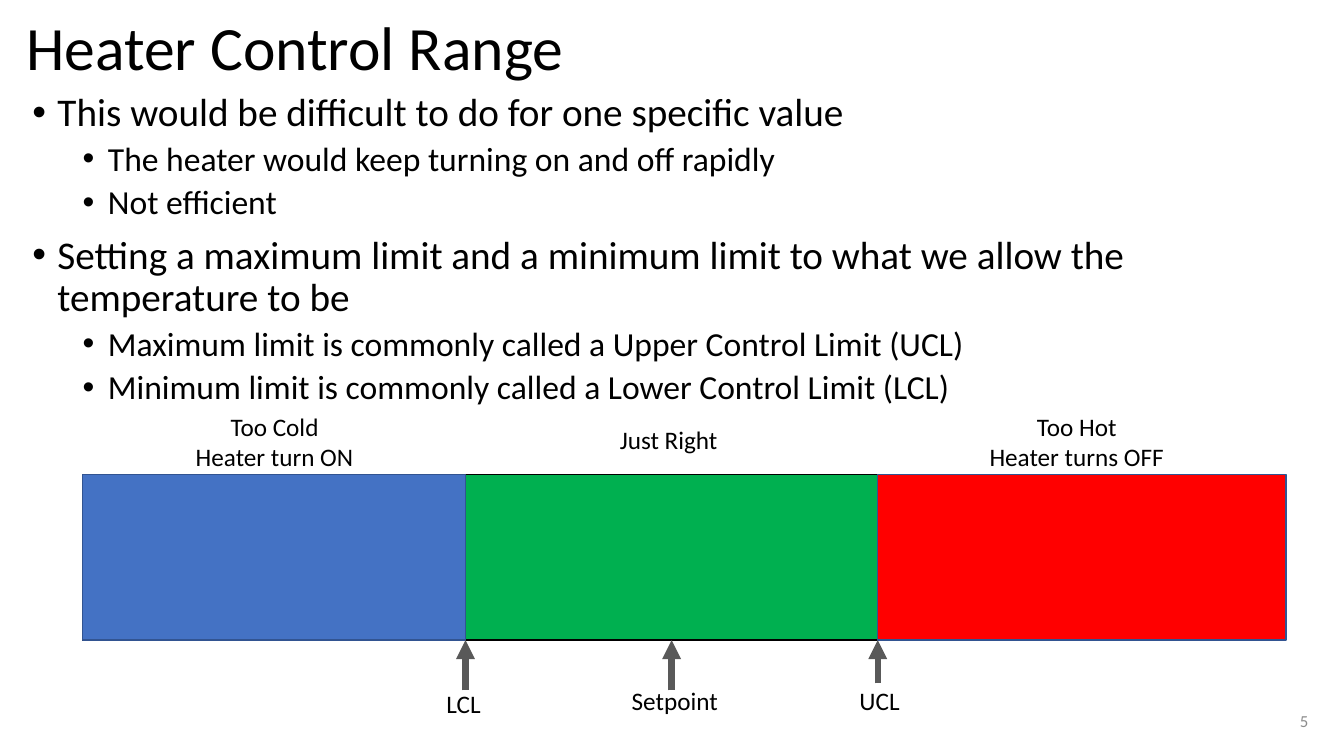
from typing import NamedTuple

from lxml import etree
from pptx import Presentation
from pptx import util as u
from pptx.dml.color import RGBColor
from pptx.enum import shapes, text
from pptx.oxml import ns

HUES = {"ink": "000000", "grey": "8C8C8C", "arrow": "595959", "edge": "325491",
        "cold": "4472C4", "right": "00B050", "hot": "FF0000"}
FONT = "Calibri"
TOP, TALL = 11.96, 4.17
LCL, UCL = 11.73, 22.12
MID = (LCL + UCL) / 2


class Zone(NamedTuple):
    left: float
    wide: float
    fill: str
    edge: str


class Label(NamedTuple):
    words: str
    left: float
    top: float
    wide: float
    high: float = 1.02
    align: text.PP_ALIGN = text.PP_ALIGN.LEFT
    size: int = 18
    hue: str = "ink"
    anchor: text.MSO_ANCHOR = text.MSO_ANCHOR.TOP


class Mark(NamedTuple):
    x: float
    foot: float


class Point(NamedTuple):
    words: str
    level: int = 0


ZONES = [Zone(2.08, 30.3, "right", "ink"),
         Zone(2.08, LCL - 2.08, "cold", "edge"),
         Zone(UCL, 10.29, "hot", "edge")]
MARKS = [Mark(MID, 17.4), Mark(LCL, 17.4), Mark(UCL, 17.22)]
MIDDLE = text.PP_ALIGN.CENTER
LABELS = [
    Label("Too Cold\nHeater turn ON", 4.42, 10.24, 5, 1.8, MIDDLE),
    Label("Too Hot\nHeater turns OFF", 24.38, 10.24, 5.51, 1.8, MIDDLE),
    Label("Just Right", 15.37, 10.57, 3.12),
    Label("LCL", 11, 17.22, 1.78),
    Label("Setpoint", 15.67, 17.15, 4.06),
    Label("UCL", 21.41, 17.15, 1.98),
    Label("5", 25.6, 17.65, 7.62, align=text.PP_ALIGN.RIGHT, size=12,
          hue="grey", anchor=text.MSO_ANCHOR.MIDDLE),
]
POINTS = [
    Point("This would be difficult to do for one specific value"),
    Point("The heater would keep turning on and off rapidly", 1),
    Point("Not efficient", 1),
    Point("Setting a maximum limit and a minimum limit to what we allow the "
          "temperature to be"),
    Point("Maximum limit is commonly called a Upper Control Limit (UCL)", 1),
    Point("Minimum limit is commonly called a Lower Control Limit (LCL)", 1),
]


def tint(name: str) -> RGBColor:
    return RGBColor.from_string(HUES[name])


def style(par, size: int, hue: str = "ink") -> None:
    par.font.name = FONT
    par.font.size = u.Pt(size)
    par.font.color.rgb = tint(hue)


def place(shape, left: float, top: float, wide: float, high: float) -> None:
    shape.left, shape.top = u.Cm(left), u.Cm(top)
    shape.width, shape.height = u.Cm(wide), u.Cm(high)


def add_title(slide) -> None:
    title = slide.shapes.title
    place(title, 0.41, 0, 14.43, 2.57)
    frame = title.text_frame
    frame.text = "Heater Control Range"
    frame.auto_size = text.MSO_AUTO_SIZE.NONE
    frame.vertical_anchor = text.MSO_ANCHOR.MIDDLE
    par = frame.paragraphs[0]
    par.alignment = text.PP_ALIGN.LEFT
    par.line_spacing = 0.9
    style(par, 44)


def add_list(slide) -> None:
    body = slide.placeholders[1]
    place(body, 0.56, 2.21, 28.4, 8.84)
    frame = body.text_frame
    frame.text = "\n".join(point.words for point in POINTS)
    frame.auto_size = text.MSO_AUTO_SIZE.NONE
    for i, (par, point) in enumerate(zip(frame.paragraphs, POINTS)):
        par.level = point.level
        par.line_spacing = 0.9
        par.space_before = u.Pt((5 if point.level else 10) if i else 0)
        props = par._p.get_or_add_pPr()
        props.set("marL", str(u.Cm(0.635 + 1.27 * point.level)))
        props.set("indent", str(u.Cm(-0.635)))
        etree.SubElement(props, ns.qn("a:buFont"), typeface="Arial")
        etree.SubElement(props, ns.qn("a:buChar"), char="•")
        style(par, 24 if point.level else 28)


def add_zone(slide, zone: Zone) -> None:
    box = slide.shapes.add_shape(
        shapes.MSO_SHAPE.RECTANGLE,
        u.Cm(zone.left), u.Cm(TOP), u.Cm(zone.wide), u.Cm(TALL))
    box.shadow.inherit = False
    box.fill.solid()
    box.fill.fore_color.rgb = tint(zone.fill)
    box.line.color.rgb = tint(zone.edge)
    box.line.width = u.Pt(1)


def add_mark(slide, mark: Mark) -> None:
    """Draw an arrow from below up to the bottom of the bar."""
    line = slide.shapes.add_connector(
        shapes.MSO_CONNECTOR.STRAIGHT,
        u.Cm(mark.x), u.Cm(mark.foot), u.Cm(mark.x), u.Cm(TOP + TALL))
    line.line.color.rgb = tint("arrow")
    line.line.width = u.Pt(4.5)
    etree.SubElement(line.line._get_or_add_ln(), ns.qn("a:tailEnd"),
                     type="triangle")
    etree.SubElement(line._element.spPr, ns.qn("a:effectLst"))


def add_label(slide, label: Label) -> None:
    box = slide.shapes.add_textbox(u.Cm(label.left), u.Cm(label.top),
                                   u.Cm(label.wide), u.Cm(label.high))
    frame = box.text_frame
    frame.text = label.words
    frame.word_wrap = True
    frame.vertical_anchor = label.anchor
    for par in frame.paragraphs:
        par.alignment = label.align
        style(par, label.size, label.hue)


def main() -> None:
    deck = Presentation()
    deck.slide_width, deck.slide_height = u.Cm(33.87), u.Cm(19.05)
    slide = deck.slides.add_slide(deck.slide_layouts[1])
    add_title(slide)
    add_list(slide)
    for zone in ZONES:
        add_zone(slide, zone)
    for mark in MARKS:
        add_mark(slide, mark)
    for label in LABELS:
        add_label(slide, label)
    deck.save("out.pptx")


if __name__ == "__main__":
    main()
